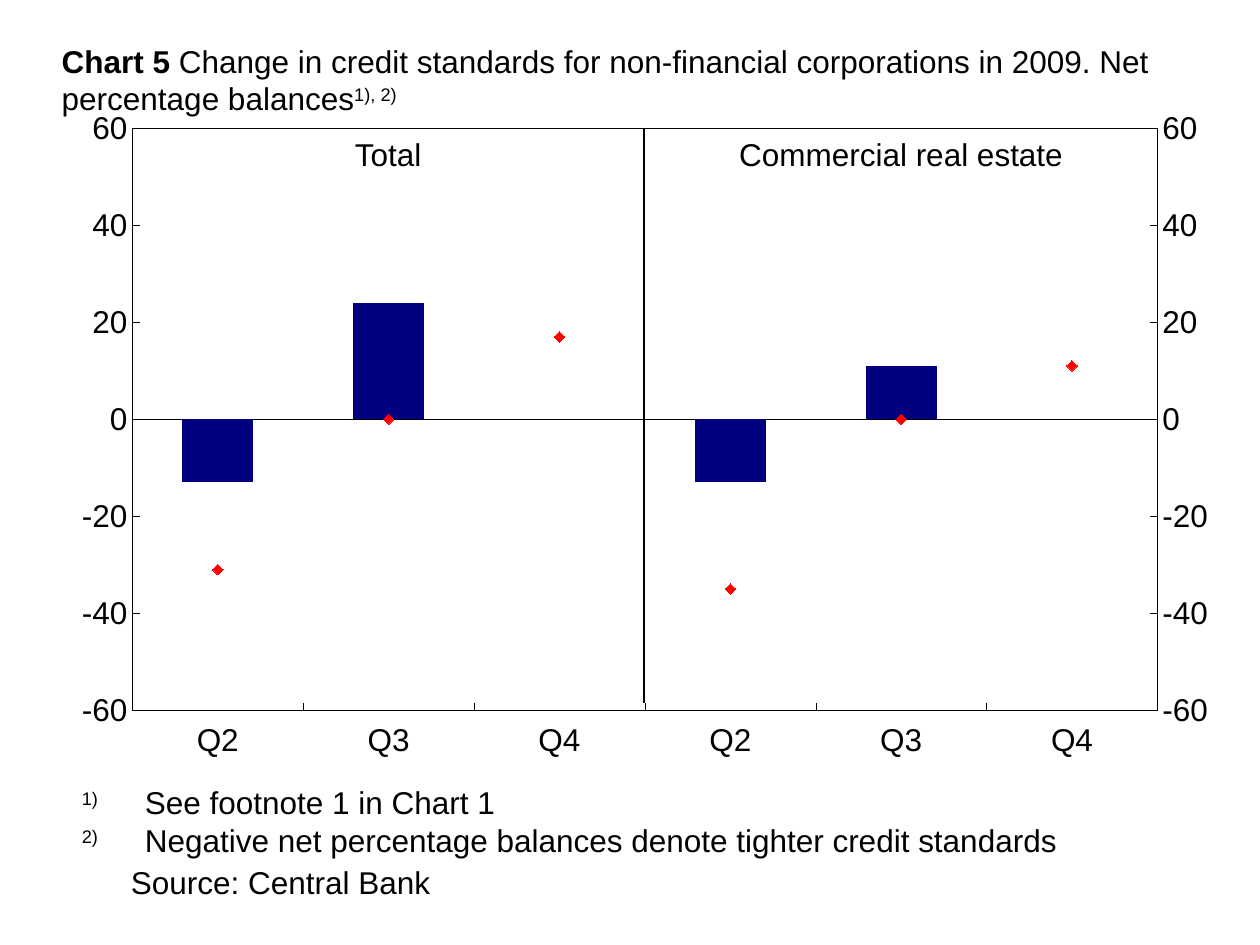
from copy import deepcopy

from lxml import etree
from pptx import Presentation
from pptx.chart.axis import CategoryAxis
from pptx.chart.data import CategoryChartData
from pptx.dml.color import RGBColor
from pptx.enum.chart import XL_CHART_TYPE, XL_MARKER_STYLE, XL_TICK_LABEL_POSITION, XL_TICK_MARK
from pptx.enum.shapes import MSO_CONNECTOR
from pptx.enum.text import MSO_ANCHOR, MSO_AUTO_SIZE, PP_ALIGN
from pptx.oxml import parse_xml
from pptx.oxml.ns import nsdecls, qn
from pptx.util import Cm, Pt

BLACK = RGBColor(0, 0, 0)
NAVY = RGBColor(0, 0, 128)
RED = RGBColor(255, 0, 0)
TEXT_FONT = {"name": "Arial", "size": Pt(18)}

TITLE = [[
    ("Chart 5 ", {"bold": True}),
    ("Change in credit standards for non-financial corporations in 2009. Net percentage balances", {}),
    ("1), 2)", {"raised": True}),
]]
FOOTNOTES = [
    [("1) \t", {"raised": True}), ("See footnote 1 in Chart 1", {})],
    [("2)", {"raised": True}), (" \tNegative net percentage balances denote tighter credit standards", {})],
]
SOURCE = [[("Source: Central Bank", {})]]
PANELS = ["Total", "Commercial real estate"]
QUARTERS = ["Q2", "Q3", "Q4"]
ACTUAL = [(-13, 24, None), (-13, 11, None)]
EXPECTED = [(-31, 0, 17), (-35, 0, 11)]
PLOT_LAYOUT = {"x": 0.07, "y": 0.029, "w": 0.861, "h": 0.832}
PANEL_LEFT, PANEL_TOP, PANEL_STEP, PANEL_WIDTH = 2.77, 2.59, 10.34, 10.11


def apply(target, values):
    for name, value in values.items():
        setattr(target, name, value)


def write(frame, paragraphs, **paragraph_format):
    frame.word_wrap = True
    frame.auto_size = MSO_AUTO_SIZE.NONE
    for index, runs in enumerate(paragraphs):
        paragraph = frame.paragraphs[0] if index == 0 else frame.add_paragraph()
        apply(paragraph, paragraph_format)
        for text, style in runs:
            run = paragraph.add_run()
            run.text = text
            apply(run.font, {**TEXT_FONT, "bold": style.get("bold", False)})
            run.font.color.rgb = BLACK
            if style.get("raised"):
                run._r.get_or_add_rPr().set("baseline", "30000")


def add_text(slide, box, paragraphs, **paragraph_format):
    shape = slide.shapes.add_textbox(*map(Cm, box))
    write(shape.text_frame, paragraphs, **paragraph_format)
    return shape


def set_line(line, width):
    line.color.rgb = BLACK
    line.width = Pt(width)


def format_axis(axis):
    apply(axis, {"has_major_gridlines": False, "minor_tick_mark": XL_TICK_MARK.NONE})
    apply(axis.tick_labels.font, TEXT_FONT)
    axis.tick_labels.font.color.rgb = BLACK
    set_line(axis.format.line, 0.25)


def copy_axis(element, axis_id, cross_id, position, crosses):
    axis = deepcopy(element)
    settings = {"axId": axis_id, "crossAx": cross_id, "axPos": position, "crosses": crosses}
    for tag, value in settings.items():
        axis.find(qn("c:" + tag)).set("val", value)
    return axis


def add_expected_plot(chart):
    plot_area = chart._chartSpace.chart.plotArea
    bars = plot_area.find(qn("c:barChart"))
    lines = parse_xml(
        f'<c:lineChart {nsdecls("c")}><c:grouping val="standard"/><c:varyColors val="0"/>'
        '<c:marker val="1"/><c:axId val="5001"/><c:axId val="5002"/></c:lineChart>')
    for series in bars.findall(qn("c:ser"))[len(ACTUAL):]:
        series.remove(series.find(qn("c:invertIfNegative")))
        lines.find(qn("c:marker")).addprevious(series)
    bars.addnext(lines)
    category = plot_area.find(qn("c:catAx"))
    value = plot_area.find(qn("c:valAx"))
    right = copy_axis(value, "5002", "5001", "r", "max")
    bottom = copy_axis(category, "5001", "5002", "b", "min")
    value.addnext(right)
    right.addnext(bottom)
    apply(CategoryAxis(bottom), {
        "major_tick_mark": XL_TICK_MARK.INSIDE,
        "tick_label_position": XL_TICK_LABEL_POSITION.NONE,
    })
    for series in chart.plots[1].series:
        series.smooth = False
        series.format.line.fill.background()
        apply(series.marker, {"style": XL_MARKER_STYLE.DIAMOND, "size": 6})
        series.marker.format.fill.solid()
        series.marker.format.fill.fore_color.rgb = RED
        series.marker.format.line.color.rgb = RED


def frame_plot(chart):
    plot_area = chart._chartSpace.chart.plotArea
    for layout in plot_area.findall(qn("c:layout")):
        plot_area.remove(layout)
    sizes = "".join(f'<c:{key} val="{value}"/>' for key, value in PLOT_LAYOUT.items())
    plot_area.insert(0, parse_xml(
        f'<c:layout {nsdecls("c")}><c:manualLayout><c:layoutTarget val="inner"/>'
        f'<c:xMode val="edge"/><c:yMode val="edge"/>{sizes}</c:manualLayout></c:layout>'))
    plot_area.append(parse_xml(
        f'<c:spPr {nsdecls("c", "a")}><a:noFill/><a:ln w="9525"><a:solidFill>'
        f'<a:srgbClr val="{BLACK}"/></a:solidFill></a:ln></c:spPr>'))


def add_credit_chart(slide):
    data = CategoryChartData()
    data.categories = QUARTERS * len(PANELS)
    empty = (None,) * len(QUARTERS)
    for kind, groups in (("Actual", ACTUAL), ("Expected", EXPECTED)):
        for index, values in enumerate(groups):
            data.add_series(f"{kind}, {PANELS[index]}",
                            empty * index + values + empty * (len(PANELS) - index - 1))
    chart = slide.shapes.add_chart(
        XL_CHART_TYPE.COLUMN_CLUSTERED, Cm(0.99), Cm(2.18), Cm(24), Cm(14.1), data).chart
    apply(chart, {"has_legend": False, "has_title": False})
    apply(chart.font, TEXT_FONT)
    plot = chart.plots[0]
    apply(plot, {"gap_width": 140, "overlap": 100, "vary_by_categories": False})
    for series in plot.series:
        series.invert_if_negative = False
        series.format.fill.solid()
        series.format.fill.fore_color.rgb = NAVY
    for axis in (chart.category_axis, chart.value_axis):
        format_axis(axis)
    apply(chart.category_axis, {
        "major_tick_mark": XL_TICK_MARK.NONE,
        "tick_label_position": XL_TICK_LABEL_POSITION.LOW,
    })
    apply(chart.value_axis, {
        "minimum_scale": -60, "maximum_scale": 60, "major_unit": 20,
        "major_tick_mark": XL_TICK_MARK.INSIDE,
    })
    add_expected_plot(chart)
    frame_plot(chart)


def main():
    presentation = Presentation()
    apply(presentation, {"slide_width": Cm(25.4), "slide_height": Cm(19.05)})
    slide = presentation.slides.add_slide(presentation.slide_layouts[5])
    title = slide.shapes.title
    apply(title, {"left": Cm(0.99), "top": Cm(0.79), "width": Cm(23.01), "height": Cm(1.7)})
    write(title.text_frame, TITLE, alignment=PP_ALIGN.LEFT)
    title.text_frame.vertical_anchor = MSO_ANCHOR.BOTTOM

    add_credit_chart(slide)
    add_text(slide, (2.39, 17.27, 12.5, 1.22), SOURCE)
    notes = add_text(slide, (1.4, 15.67, 21.44, 1.4), FOOTNOTES)
    for paragraph in notes.text_frame.paragraphs:
        properties = paragraph._p.get_or_add_pPr()
        properties.set("marL", str(Cm(1.27)))
        properties.set("indent", str(-Cm(1.27)))
    for index, name in enumerate(PANELS):
        box = (PANEL_LEFT + index * PANEL_STEP, PANEL_TOP, PANEL_WIDTH, 1.02)
        add_text(slide, box, [[(name, {})]], alignment=PP_ALIGN.CENTER)

    divider = slide.shapes.add_connector(
        MSO_CONNECTOR.STRAIGHT, Cm(12.98), Cm(14.17), Cm(12.98), Cm(PANEL_TOP))
    set_line(divider.line, 0.75)
    etree.SubElement(divider._element.spPr, qn("a:effectLst"))
    presentation.save("out.pptx")


if __name__ == "__main__":
    main()
